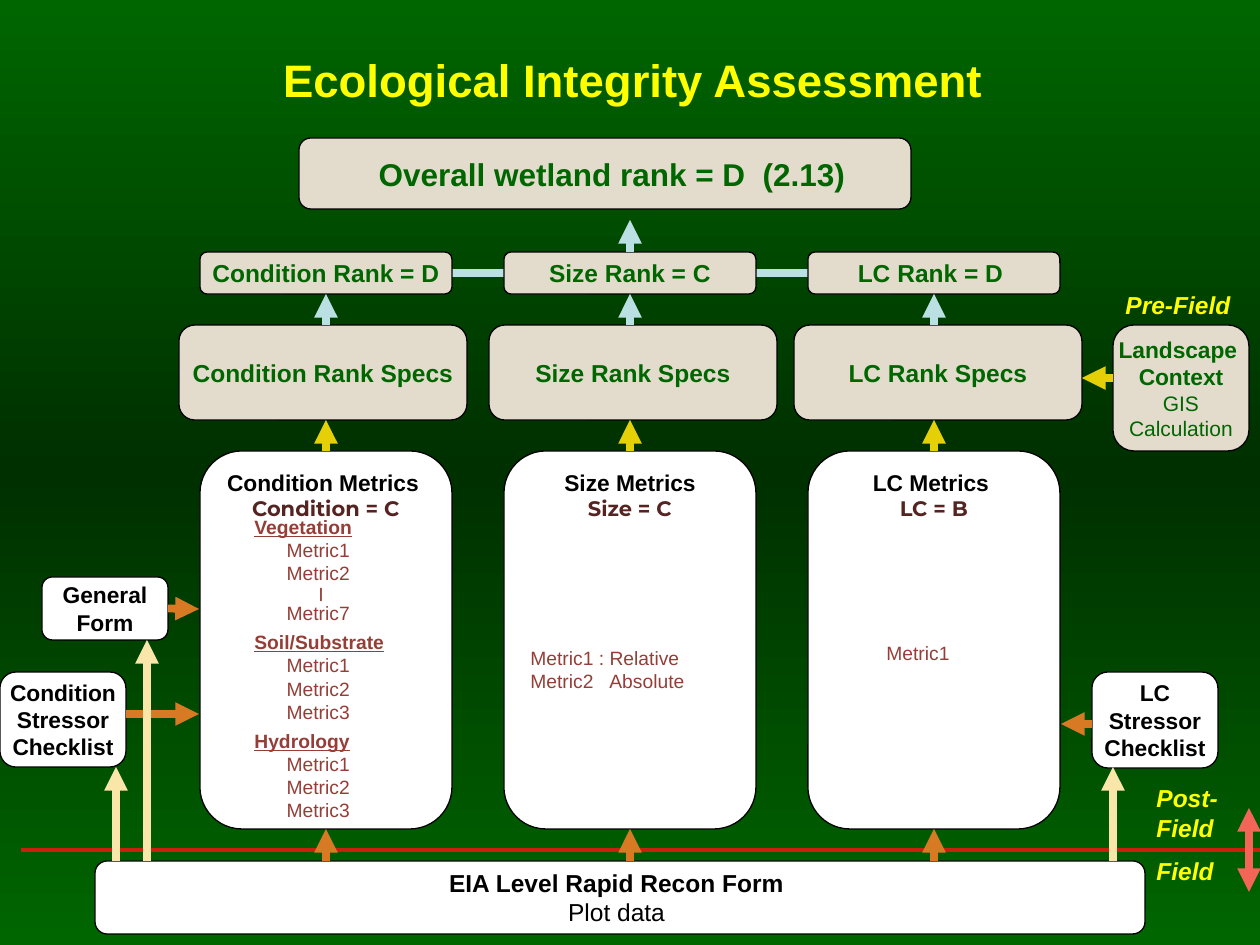
from pptx import Presentation
from pptx.dml.color import RGBColor
from pptx.enum.shapes import MSO_CONNECTOR, MSO_SHAPE
from pptx.enum.text import MSO_ANCHOR, PP_ALIGN
from pptx.oxml import parse_xml
from pptx.oxml.ns import nsdecls, qn
from pptx.oxml.xmlchemy import OxmlElement
from pptx.util import Pt
from copy import deepcopy

SCALE = 914400 / 126

GREEN = RGBColor(0x00, 0x66, 0x00)
DARK = RGBColor(0x00, 0x2F, 0x00)
YELLOW = RGBColor(0xFF, 0xFF, 0x00)
SAND = RGBColor(0xE3, 0xDC, 0xCD)
WHITE = RGBColor(0xFF, 0xFF, 0xFF)
BLACK = RGBColor(0x00, 0x00, 0x00)
BROWN = RGBColor(0x56, 0x24, 0x20)
RUST = RGBColor(0x95, 0x3E, 0x37)
ICE = RGBColor(0xBB, 0xE0, 0xE3)
GOLD = RGBColor(0xE5, 0xD0, 0x07)
ORANGE = RGBColor(0xD8, 0x7A, 0x24)
CREAM = RGBColor(0xFB, 0xE6, 0xA9)
RED = RGBColor(0xCA, 0x20, 0x0E)
CORAL = RGBColor(0xF3, 0x66, 0x57)

TITLE = "Ecological Integrity Assessment"
COLUMNS = [
    ("Condition Rank = D", "Condition Rank Specs", 179, "Condition Metrics ", "Condition = C"),
    ("Size Rank = C", "Size Rank Specs", 489, "Size Metrics", "Size = C"),
    ("LC Rank = D ", "LC Rank Specs", 794, "LC Metrics ", "LC = B"),
]
FORMS = {
    "general": ((42, 577, 126, 63), ["General", "Form"]),
    "condition": ((0, 672, 126, 95), ["Condition", "Stressor", "Checklist"]),
    "landscape": ((1092, 672, 126, 96), ["LC", "Stressor", "Checklist"]),
}
GROUPS = [
    ("Vegetation", ["Metric1 ", "Metric2 ", "|", "Metric7 "]),
    ("Soil/Substrate", ["Metric1 ", "Metric2 ", "Metric3 "]),
    ("Hydrology", ["Metric1 ", "Metric2 ", "Metric3 "]),
]
STAGES = [
    ((1113, 284, 147, 42), "Pre-Field"),
    ((1144, 777, 105, 72), "Post-Field"),
    ((1144, 850, 105, 42), "Field"),
]
FREE = [
    ((126, 714), (199, 714), ORANGE),
    ((1092, 724), (1061, 724), ORANGE),
    ((1113, 378), (1082, 378), GOLD),
    ((1113, 861), (1113, 767), CREAM),
    ((116, 861), (116, 767), CREAM),
    ((147, 861), (147, 640), CREAM),
    ((1249, 850), (1249, 808), CORAL),
    ((1249, 850), (1249, 892), CORAL),
]


def px(n):
    return round(n * SCALE)


def write(frame, lines, align=PP_ALIGN.CENTER, **base):
    for i, line in enumerate(lines):
        text, extra = line if isinstance(line, tuple) else (line, {})
        form = {"size": 14, "color": BLACK, "font": "Arial", "bold": False,
                "align": align, **base, **extra}
        para = frame.paragraphs[0] if i == 0 else frame.add_paragraph()
        para.alignment = form["align"]
        if "gap" in form:
            para.space_before = Pt(form["gap"])
        if "tab" in form:
            stops = OxmlElement("a:tabLst")
            stop = OxmlElement("a:tab")
            stop.set("pos", str(px(form["tab"])))
            stop.set("algn", "l")
            stops.append(stop)
            para._p.get_or_add_pPr().append(stops)
        run = para.add_run()
        run.text = text
        font = run.font
        font.name, font.size, font.bold = form["font"], Pt(form["size"]), form["bold"]
        font.italic, font.underline = form.get("italic"), form.get("under")
        font.color.rgb = form["color"]


def card(spot, lines, fill=WHITE, anchor=MSO_ANCHOR.MIDDLE, left=0, top=0, **form):
    shape = slide.shapes.add_shape(MSO_SHAPE.ROUNDED_RECTANGLE, *map(px, spot))
    shape.shadow.inherit = False
    shape.fill.solid()
    shape.fill.fore_color.rgb = fill
    shape.line.color.rgb = BLACK
    shape.line.width = Pt(0.75)
    frame = shape.text_frame
    frame.word_wrap = False
    frame.vertical_anchor = anchor
    frame.margin_left, frame.margin_top = px(left), px(top)
    frame.margin_right = frame.margin_bottom = 0
    write(frame, lines, **{"bold": True, **form})
    return shape


def note(spot, lines, **form):
    frame = slide.shapes.add_textbox(*map(px, spot)).text_frame
    frame.word_wrap = True
    write(frame, lines, **{"align": PP_ALIGN.LEFT, "size": 11, "color": RUST, **form})


def link(start, end, color, width=4.5, head=True, begin=None, finish=None):
    line = slide.shapes.add_connector(MSO_CONNECTOR.STRAIGHT, *map(px, start + end))
    line.line.color.rgb = color
    line.line.width = Pt(width)
    if head:
        line.line._get_or_add_ln().append(
            parse_xml(f'<a:tailEnd {nsdecls("a")} type="triangle"/>'))
    line._element.spPr.append(OxmlElement("a:effectLst"))
    if begin:
        line.begin_connect(*begin)
    if finish:
        line.end_connect(*finish)


deck = Presentation()
deck.slide_width, deck.slide_height = px(1260), px(945)
slide = deck.slides.add_slide(deck.slide_layouts[5])

back = slide.background.fill
back.gradient()
back.gradient_angle = 90
first, last = back.gradient_stops
first.color.rgb = last.color.rgb = GREEN
first.position, last.position = 0, 1
ends = list(slide._element.iter(qn("a:gs")))
ends[0].addnext(deepcopy(ends[0]))
middle = back.gradient_stops[1]
middle.color.rgb, middle.position = DARK, 0.5

title = slide.shapes.title
title.left, title.top, title.width, title.height = map(px, (3, 37, 1260, 84))
title.text_frame.vertical_anchor = MSO_ANCHOR.MIDDLE
write(title.text_frame, [TITLE], size=26, color=YELLOW, bold=True)

card((299, 138, 612, 71), ["Overall wetland rank = D  (2.13)"],
     fill=SAND, left=14, size=18, color=GREEN)
link((430, 273), (870, 273), ICE)
link((21, 850), (1281, 850), RED, width=2.25, head=False)
card((95, 861, 1050, 73),
     ["EIA Level Rapid Recon Form ", ("Plot data ", {"bold": False})])

for i, (rank, spec, left, head, grade) in enumerate(COLUMNS):
    x = 200 + 304 * i
    mid = x + 126
    score = card((x, 252, 252, 42), [rank], fill=SAND, color=GREEN)
    card((left, 325, 288, 95), [spec], fill=SAND, color=GREEN)
    metric = card((x, 451, 252, 378),
                  [head, (grade, {"size": 12, "font": "Montserrat", "color": BROWN})],
                  anchor=MSO_ANCHOR.TOP, top=5, size=13)
    link((mid, 325), (mid, 294), ICE, finish=(score, 2))
    link((mid, 451), (mid, 420), GOLD, begin=(metric, 0))
    link((mid, 861), (mid, 829), ORANGE, finish=(metric, 2))
    if rank.startswith("Size"):
        link((mid, 252), (mid, 220), ICE, begin=(score, 0))

form = {name: card(spot, lines, size=13) for name, (spot, lines) in FORMS.items()}
link((168, 609), (199, 609), ORANGE, begin=(form["general"], 3))
plain = {"size": 12, "bold": False}
card((1113, 325, 136, 126),
     ["Landscape ", "Context", ("GIS", plain), ("Calculation", plain)],
     fill=SAND, size=13, color=GREEN)
for start, end, color in FREE:
    link(start, end, color)

rows = []
for i, (name, items) in enumerate(GROUPS):
    top = {"gap": 3.5} if i else {}
    rows.append((name, {"bold": True, "under": True, **top}))
    for item in items:
        tick = {"size": 8, "bold": True} if item == "|" else {}
        rows.append((item, {"align": PP_ALIGN.CENTER, **tick}))
note((242, 509, 158, 320), rows)
note((518, 640, 238, 59), ["Metric1 : Relative", ("Metric2\tAbsolute", {"tab": 79})])
note((874, 635, 126, 37), ["Metric1"])
for spot, text in STAGES:
    note(spot, [text], size=14, color=YELLOW, bold=True, italic=True)

deck.save("out.pptx")
